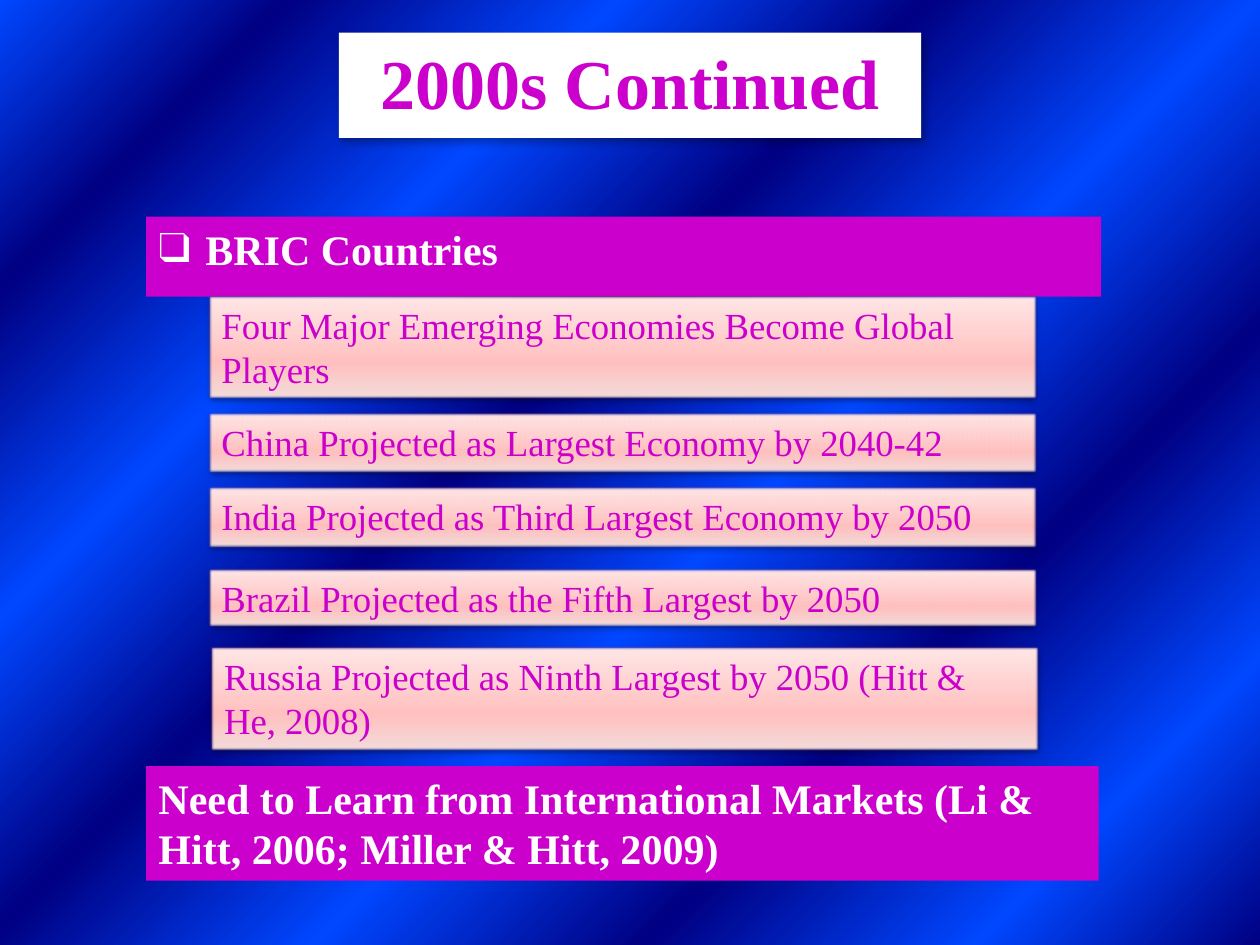
import pptx
import pptx.dml.color
import pptx.enum.shapes
import pptx.enum.text
import pptx.oxml.ns
import pptx.util
from lxml import etree

THEME = {
    "font": "Times New Roman",
    "accent": "CC00CC",
    "light": "FFFFFF",
    "edge": "BF4C48",
    "shadow": "000000",
    "title": 40,
    "heading": 24,
    "point": 21,
    "panel": [(0, "F2DCDB"), (35, "FFC0BF"), (100, "FFE7E7")],
    "stripes": list(zip((0, 13, 28, 43, 58, 72, 87, 100), ("000082", "0047FF") * 4)),
}
rgb = pptx.dml.color.RGBColor.from_string
qn = pptx.oxml.ns.qn


def add_xml(parent, tag, **attrs):
    return etree.SubElement(parent, qn(tag), {k: str(v) for k, v in attrs.items()})


def set_gradient(fill, parent, stops, angle):
    fill.gradient()
    fill.gradient_angle = angle
    gs_list = next(parent.iter(qn("a:gsLst")))
    for gs in list(gs_list):
        gs_list.remove(gs)
    for share, color in stops:
        add_xml(add_xml(gs_list, "a:gs", pos=share * 1000), "a:srgbClr", val=color)


prs = pptx.Presentation()
prs.slide_width = pptx.util.Inches(10)
prs.slide_height = pptx.util.Inches(7.5)
col = prs.slide_width / 100
row = prs.slide_height / 75

s = prs.slides.add_slide(prs.slide_layouts[1])
set_gradient(s.background.fill, s.background._cSld, THEME["stripes"], 135)

boxes = [
    ("title", "2000s Continued", 26.9, 2.6, 46.2, 7.7),
    ("bullet", "BRIC Countries", 11.6, 17.2, 75.8, 5),
    ("point", "Four Major Emerging Economies Become Global Players", 16.6, 23.5, 65.6, 8.1),
    ("point", "China Projected as Largest Economy by 2040-42", 16.6, 32.8, 65.6, 4.7),
    ("point", "India Projected as Third Largest Economy by 2050", 16.6, 38.7, 65.6, 4.7),
    ("point", "Brazil Projected as the Fifth Largest by 2050", 16.6, 45.2, 65.6, 4.5),
    ("point", "Russia Projected as Ninth Largest by 2050 (Hitt & He, 2008)", 16.8, 51.4, 65.6, 8.1),
    ("heading", "Need to Learn from International Markets (Li & Hitt, 2006; Miller & Hitt, 2009)",
     11.6, 60.8, 75.6, 9.1),
]
shadows = {"title": (30, 4.5, 2.6, 53), "point": (38, 3.1, 1.6, 90)}

for kind, text, x, y, w, h in boxes:
    place = [round(v) for v in (x * col, y * row, w * col, h * row)]
    if kind == "title":
        sp = s.shapes.title
    elif kind == "bullet":
        sp = s.placeholders[1]
    else:
        sp = s.shapes.add_shape(pptx.enum.shapes.MSO_SHAPE.RECTANGLE, *place)
        sp.shadow.inherit = False
    sp.left, sp.top, sp.width, sp.height = place
    spPr = sp._element.spPr

    if kind == "point":
        set_gradient(sp.fill, spPr, THEME["panel"], 90)
        sp.line.color.rgb = rgb(THEME["edge"])
        sp.line.width = pptx.util.Pt(0.75)
    else:
        sp.fill.solid()
        sp.fill.fore_color.rgb = rgb(THEME["light" if kind == "title" else "accent"])
        sp.line.fill.background()

    if kind in shadows:
        alpha, blur, dist, angle = shadows[kind]
        effects = spPr.find(qn("a:effectLst"))
        if effects is None:
            effects = add_xml(spPr, "a:effectLst")
        shadow = add_xml(effects, "a:outerShdw", blurRad=pptx.util.Pt(blur),
                         dist=pptx.util.Pt(dist), dir=angle * 60000, algn="tl", rotWithShape=0)
        add_xml(add_xml(shadow, "a:srgbClr", val=THEME["shadow"]), "a:alpha", val=alpha * 1000)
        if kind == "point":
            add_xml(effects, "a:softEdge", rad=pptx.util.Pt(1))

    tf = sp.text_frame
    tf.word_wrap = True
    tf.auto_size = pptx.enum.text.MSO_AUTO_SIZE.SHAPE_TO_FIT_TEXT
    tf.vertical_anchor = pptx.enum.text.MSO_ANCHOR.TOP
    p = tf.paragraphs[0]
    p.space_before = pptx.util.Pt(0)
    p.alignment = pptx.enum.text.PP_ALIGN.CENTER if kind == "title" else pptx.enum.text.PP_ALIGN.LEFT
    if kind == "bullet":
        pPr = p._p.get_or_add_pPr()
        pPr.set("marL", str(pptx.util.Inches(0.37)))
        pPr.set("indent", str(pptx.util.Inches(-0.37)))
        add_xml(pPr, "a:buFont", typeface=THEME["font"])
        add_xml(pPr, "a:buChar", char="❑")
    r = p.add_run()
    r.text = text
    r.font.name = THEME["font"]
    r.font.size = pptx.util.Pt(THEME["heading" if kind == "bullet" else kind])
    r.font.bold = kind != "point"
    r.font.color.rgb = rgb(THEME["accent" if kind in shadows else "light"])

prs.save("out.pptx")
